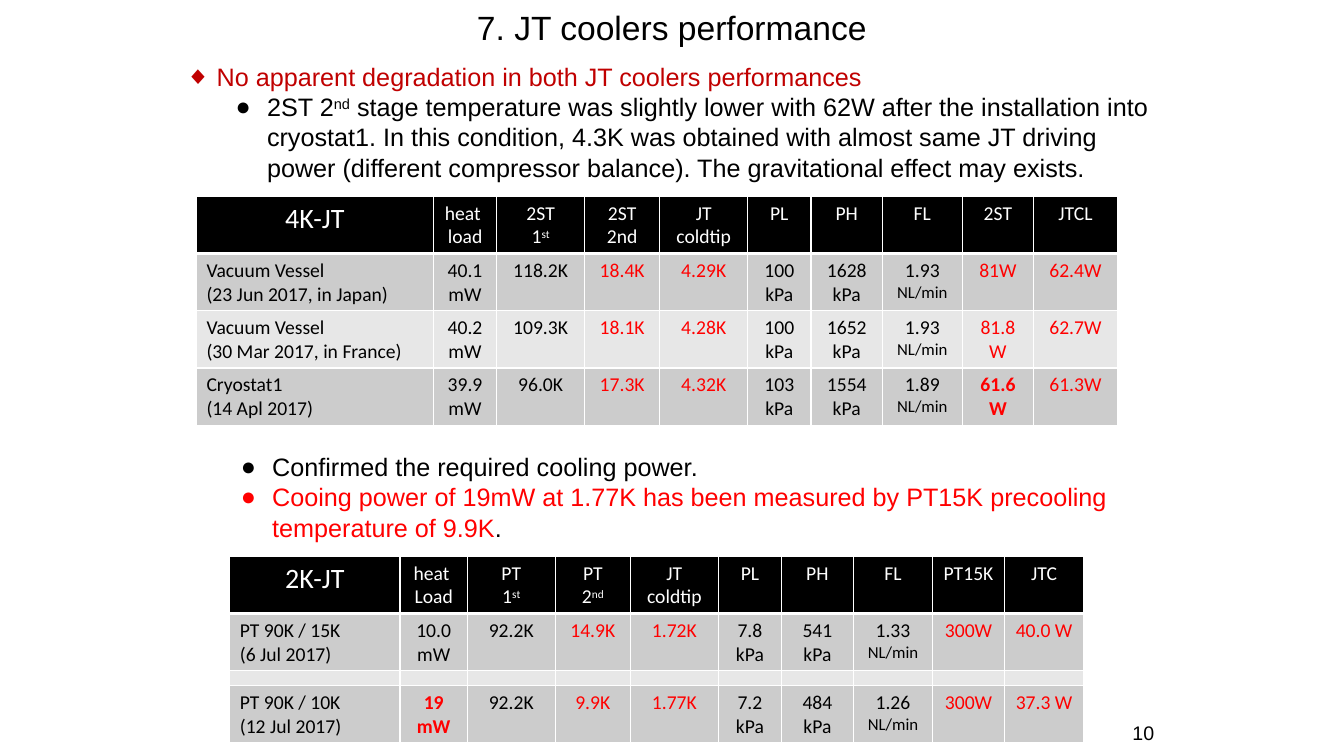
from dataclasses import dataclass

from lxml.etree import SubElement
from pptx import Presentation
from pptx.dml.color import RGBColor
from pptx.enum.text import MSO_ANCHOR, PP_ALIGN
from pptx.oxml.ns import qn
from pptx.util import Cm, Pt

BLACK = RGBColor(0x00, 0x00, 0x00)
WHITE = RGBColor(0xFF, 0xFF, 0xFF)
RED = RGBColor(0xFF, 0x00, 0x00)
DARK_RED = RGBColor(0xC0, 0x00, 0x00)
BAND_DARK = RGBColor(0xCC, 0xCC, 0xCC)
BAND_LIGHT = RGBColor(0xE7, 0xE7, 0xE7)

ROW_HEIGHT = 1.44
SPACER_HEIGHT = 0.38
RED_COLUMNS = {3, 4, 8, 9}


@dataclass
class Span:
    text: str
    color: RGBColor = BLACK
    raised: bool = False


@dataclass
class Line:
    spans: list[Span]
    bullet: str = ""
    level: int = 0


@dataclass
class TextBox:
    left: float
    top: float
    width: float
    height: float
    lines: list[Line]
    size: int = 18
    align: PP_ALIGN = PP_ALIGN.LEFT
    anchor: MSO_ANCHOR = MSO_ANCHOR.TOP
    wrap: bool = True


@dataclass
class CoolerTable:
    left: float
    top: float
    widths: list[float]
    rows: list[list[str]]
    bold_cell: tuple[int, int]


TEXT_BOXES = [
    TextBox(11.71, 0.05, 10.44, 1.27, [Line([Span("7. JT coolers performance")])],
            size=24, align=PP_ALIGN.CENTER, wrap=False),
    TextBox(4.42, 1.42, 24.79, 3.33, [
        Line([Span("No apparent degradation in both JT coolers performances", DARK_RED)], "◆"),
        Line([
            Span("2ST 2"),
            Span("nd", raised=True),
            Span(" stage temperature was slightly lower with 62W after the installation into "
                 "cryostat1. In this condition, 4.3K was obtained with almost same JT driving "
                 "power (different compressor balance). The gravitational effect may exists."),
        ], "●", 1),
    ]),
    TextBox(23.42, 17.96, 5.92, 0.99, [Line([Span("10")])],
            size=14, align=PP_ALIGN.RIGHT, anchor=MSO_ANCHOR.MIDDLE),
    TextBox(5.82, 11.25, 23.42, 2.57, [
        Line([Span("Confirmed the required cooling power.")], "●"),
        Line([
            Span("Cooing power of 19mW at 1.77K has been measured by PT15K precooling "
                 "temperature of 9.9K", RED),
            Span("."),
        ], "●"),
    ]),
]

TABLES = [
    CoolerTable(4.95, 4.95, [5.97, 1.6, 2.21, 1.9, 2.21, 1.6, 1.8, 2.01, 1.8, 2.11], [
        ["4K-JT", "heat \nload", "2ST\n1^st", "2ST\n2nd", "JT\ncoldtip",
         "PL", "PH", "FL", "2ST", "JTCL"],
        ["Vacuum Vessel\n(23 Jun 2017, in Japan)", "40.1\nmW", "118.2K", "18.4K", "4.29K",
         "100\nkPa", "1628\nkPa", "1.93\nNL/min", "81W", "62.4W"],
        ["Vacuum Vessel\n(30 Mar 2017, in France)", "40.2\nmW", "109.3K", "18.1K", "4.28K",
         "100\nkPa", "1652\nkPa", "1.93\nNL/min", "81.8W", "62.7W"],
        ["Cryostat1\n(14 Apl 2017)", "39.9\nmW", "96.0K", "17.3K", "4.32K",
         "103\nkPa", "1554\nkPa", "1.89\nNL/min", "61.6W", "61.3W"],
    ], (3, 8)),
    CoolerTable(5.79, 14.02, [4.29, 1.7, 2.21, 1.9, 2.21, 1.6, 1.8, 2.01, 1.8, 2.01], [
        ["2K-JT", "heat \nLoad", "PT\n1^st", "PT\n2^nd", "JT\ncoldtip",
         "PL", "PH", "FL", "PT15K", "JTC"],
        ["PT 90K / 15K\n(6 Jul 2017)", "10.0\nmW", "92.2K", "14.9K", "1.72K",
         "7.8\nkPa", "541\nkPa", "1.33\nNL/min", "300W", "40.0 W"],
        [""] * 10,
        ["PT 90K / 10K\n(12 Jul 2017)", "19\nmW", "92.2K", "9.9K", "1.77K",
         "7.2\nkPa", "484\nkPa", "1.26\nNL/min", "300W", "37.3 W"],
    ], (3, 1)),
]


def add_span(p, span: Span, font: str, size: float, bold: bool = False) -> None:
    r = p.add_run()
    r.text = span.text
    r.font.name = font
    r.font.size = Pt(size)
    r.font.bold = bold
    r.font.color.rgb = span.color
    if span.raised:
        r.font._element.set("baseline", "30000")


def set_bullet(p, char: str, level: int) -> None:
    p.level = level
    pPr = p._p.get_or_add_pPr()
    pPr.set("marL", str(Cm(0.79 + 1.27 * level)))
    pPr.set("indent", str(Cm(-0.79)))
    SubElement(pPr, qn("a:buFont"), typeface="Arial")
    SubElement(pPr, qn("a:buChar"), char=char)


def add_text_box(s, box: TextBox) -> None:
    sp = s.shapes.add_textbox(Cm(box.left), Cm(box.top), Cm(box.width), Cm(box.height))
    tf = sp.text_frame
    tf.word_wrap = box.wrap
    tf.vertical_anchor = box.anchor
    for i, line in enumerate(box.lines):
        p = tf.add_paragraph() if i else tf.paragraphs[0]
        p.alignment = box.align
        if line.bullet:
            set_bullet(p, line.bullet, line.level)
        for span in line.spans:
            add_span(p, span, "Arial", box.size)


def set_borders(cell, bottom: float) -> None:
    tcPr = cell._tc.get_or_add_tcPr()
    for side, width in (("L", 1), ("R", 1), ("T", 1), ("B", bottom)):
        ln = SubElement(tcPr, qn(f"a:ln{side}"), w=str(Pt(width)))
        fill = SubElement(ln, qn("a:solidFill"))
        SubElement(fill, qn("a:srgbClr"), val=str(WHITE))


def fill_cell(cell, text: str, row: int, col: int, bold: bool) -> None:
    header = row == 0
    set_borders(cell, 3 if header else 1)
    cell.fill.solid()
    cell.fill.fore_color.rgb = BLACK if header else BAND_DARK if row % 2 else BAND_LIGHT
    tf = cell.text_frame
    if not text:
        cell.margin_top = cell.margin_bottom = 0
        SubElement(tf.paragraphs[0]._p, qn("a:endParaRPr"), sz="300")
        return
    color = WHITE if header else RED if bold or col in RED_COLUMNS else BLACK
    for i, line in enumerate(text.split("\n")):
        p = tf.add_paragraph() if i else tf.paragraphs[0]
        p.alignment = PP_ALIGN.CENTER if header or col else PP_ALIGN.LEFT
        size = 20 if header and col == 0 else 12 if line == "NL/min" else 14
        for j, part in enumerate(line.split("^")):
            add_span(p, Span(part, color, j == 1), "Calibri", size, bold)


def add_cooler_table(s, spec_table: CoolerTable) -> None:
    heights = [ROW_HEIGHT if any(row) else SPACER_HEIGHT for row in spec_table.rows]
    sp = s.shapes.add_table(len(heights), len(spec_table.widths),
                            Cm(spec_table.left), Cm(spec_table.top),
                            Cm(sum(spec_table.widths)), Cm(sum(heights)))
    table = sp.table
    for column, width in zip(table.columns, spec_table.widths):
        column.width = Cm(width)
    for i, (row, height) in enumerate(zip(spec_table.rows, heights)):
        table.rows[i].height = Cm(height)
        for j, text in enumerate(row):
            fill_cell(table.cell(i, j), text, i, j, (i, j) == spec_table.bold_cell)


def main() -> None:
    prs = Presentation()
    prs.slide_width, prs.slide_height = Cm(33.87), Cm(19.05)
    s = prs.slides.add_slide(prs.slide_layouts[6])
    for box in TEXT_BOXES:
        add_text_box(s, box)
    for cooler_table in TABLES:
        add_cooler_table(s, cooler_table)
    prs.save("out.pptx")


if __name__ == "__main__":
    main()
